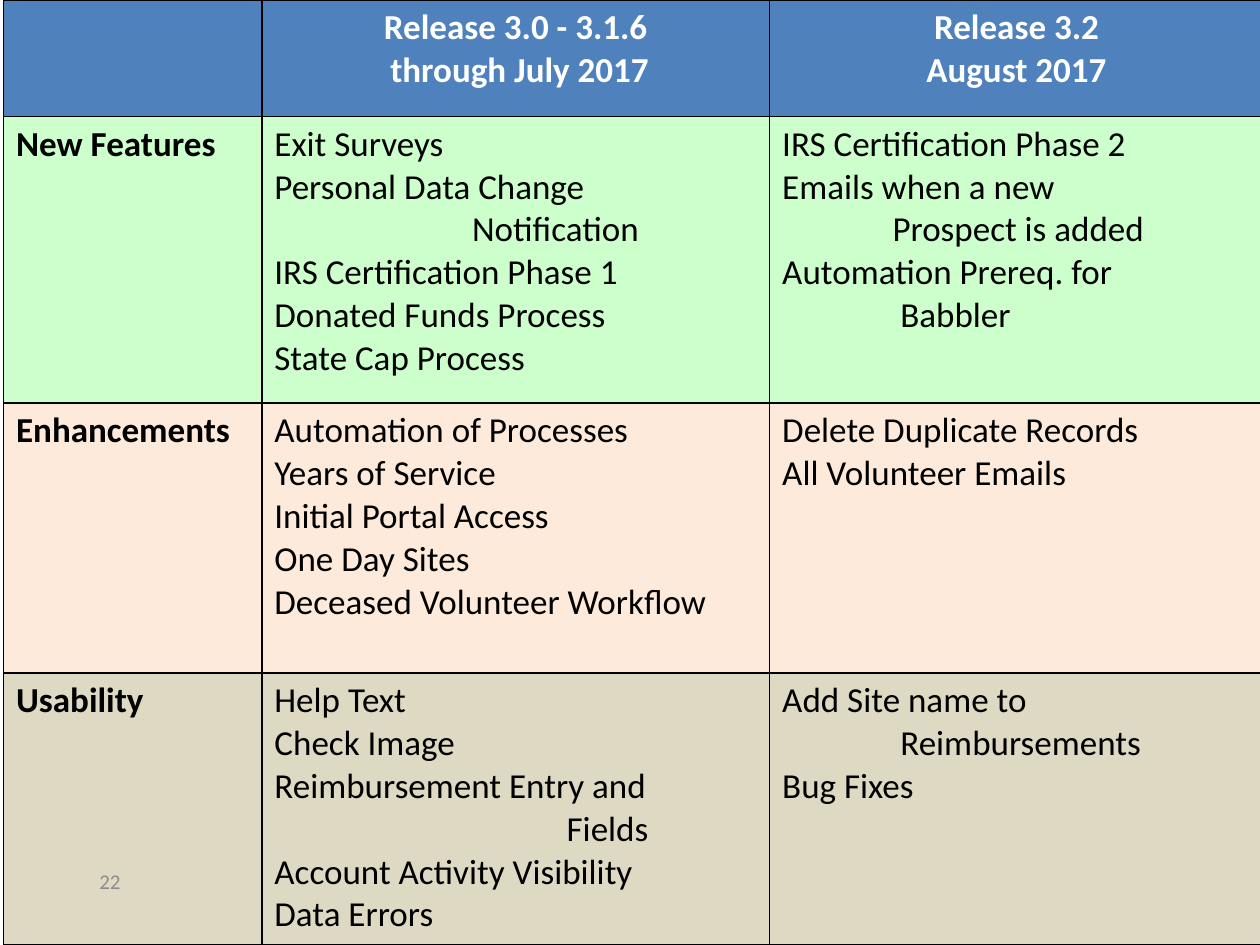
from lxml.etree import SubElement
from pptx import Presentation
from pptx.dml.color import RGBColor
from pptx.enum.text import MSO_ANCHOR, PP_ALIGN
from pptx.oxml.ns import qn
from pptx.util import Pt


def color(value):
    return RGBColor.from_string(value)


def write(frame, text, size=20, ink="000000", bold=False, align=PP_ALIGN.LEFT, indents=None):
    for number, line in enumerate(text.split("\n")):
        para = frame.add_paragraph() if number else frame.paragraphs[0]
        para.alignment = align
        if indents and line in indents:
            properties = para._p.get_or_add_pPr()
            properties.set("marL", str(Pt(indents[line])))
            properties.set("indent", "0")
        span = para.add_run()
        span.text = line
        span.font.name = "Calibri"
        span.font.size = Pt(size)
        span.font.bold = bold
        span.font.color.rgb = color(ink)


deck = Presentation()
deck.slide_width, deck.slide_height = Pt(720), Pt(540)
page = deck.slides.add_slide(deck.slide_layouts[6])

column_widths = [147.6, 290.2, 282.2]
row_heights = [66.6, 163.8, 154.2, 155.4]
row_fills = ["4F81BD", "CCFFCC", "FDEADA", "DDD9C3"]
releases = [
    ["", "Release 3.0 - 3.1.6\nthrough July 2017", "Release 3.2\nAugust 2017"],
    [
        "New Features",
        "Exit Surveys\nPersonal Data Change\nNotification\nIRS Certification Phase 1\n"
        "Donated Funds Process\nState Cap Process",
        "IRS Certification Phase 2\nEmails when a new\nProspect is added\n"
        "Automation Prereq. for\nBabbler",
    ],
    [
        "Enhancements",
        "Automation of Processes\nYears of Service\nInitial Portal Access\n"
        "One Day Sites\nDeceased Volunteer Workflow",
        "Delete Duplicate Records\nAll Volunteer Emails",
    ],
    [
        "Usability",
        "Help Text\nCheck Image\nReimbursement Entry and\nFields\n"
        "Account Activity Visibility\nData Errors",
        "Add Site name to\nReimbursements\nBug Fixes",
    ],
]
continuation_indents = {
    "through July 2017": 4.5,
    "Notification": 113,
    "Prospect is added": 63,
    "Babbler": 67.5,
    "Fields": 167,
    "Reimbursements": 67.5,
}

table = page.shapes.add_table(4, 3, Pt(2), Pt(0), Pt(720), Pt(540)).table
table.first_row = False
table.horz_banding = False
for column, width in zip(table.columns, column_widths):
    column.width = Pt(width)
for row, height in zip(table.rows, row_heights):
    row.height = Pt(height)

for row_index, (texts, fill) in enumerate(zip(releases, row_fills)):
    for column_index, text in enumerate(texts):
        cell = table.cell(row_index, column_index)
        properties = cell._tc.get_or_add_tcPr()
        for side in ("a:lnL", "a:lnR", "a:lnT", "a:lnB"):
            border = SubElement(properties, qn(side), w=str(Pt(1)))
            solid = SubElement(border, qn("a:solidFill"))
            SubElement(solid, qn("a:srgbClr"), val="000000")
        cell.fill.solid()
        cell.fill.fore_color.rgb = color(fill)
        header = row_index == 0
        if text:
            write(
                cell.text_frame,
                text,
                ink="FFFFFF" if header else "000000",
                bold=header or column_index == 0,
                align=PP_ALIGN.CENTER if header else PP_ALIGN.LEFT,
                indents=continuation_indents,
            )

number_box = page.shapes.add_textbox(Pt(49.7), Pt(488.9), Pt(50.4), Pt(28.8))
number_box.text_frame.word_wrap = True
number_box.text_frame.vertical_anchor = MSO_ANCHOR.MIDDLE
write(number_box.text_frame, "22", size=12, ink="8C8C8C")

deck.save("out.pptx")
